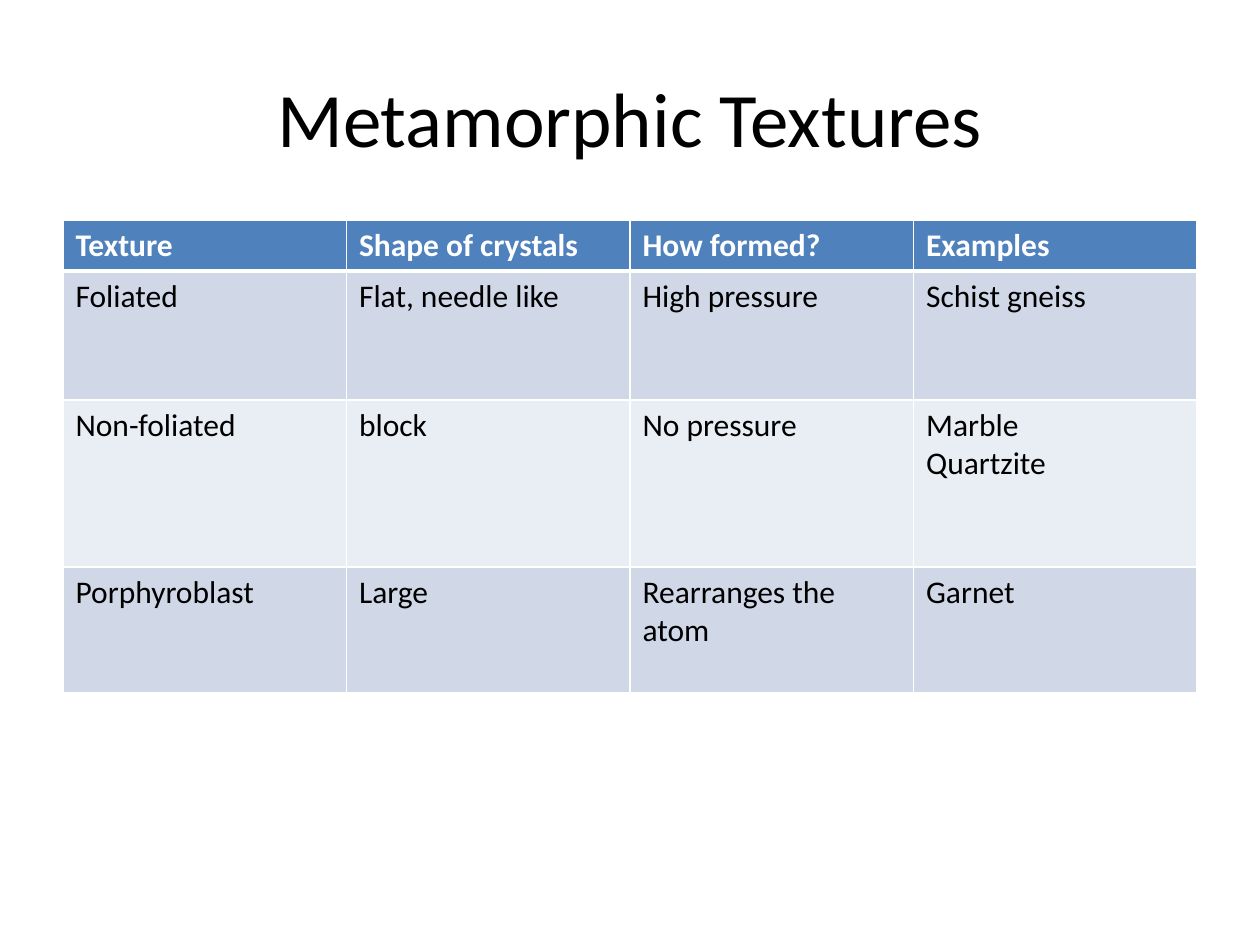
import pptx
import pptx.util
import pptx.dml.color
import pptx.enum.text
import pptx.oxml.ns
import lxml.etree

RGB = pptx.dml.color.RGBColor
WHITE = RGB(0xFF, 0xFF, 0xFF)
BLACK = RGB(0, 0, 0)
BLUE = RGB(0x4F, 0x81, 0xBD)
DARK = RGB(0xD0, 0xD8, 0xE8)
LIGHT = RGB(0xE9, 0xED, 0xF4)

WIDE, HIGH = 10, 7.5
COLS, ROWS = 20, 30
TALL = [1.6, 4.1, 5.3, 4]
DATA = [
    ["Texture", "Shape of crystals", "How formed?", "Examples"],
    ["Foliated", "Flat, needle like", "High pressure", "Schist gneiss"],
    ["Non-foliated", "block", "No pressure", "Marble\nQuartzite"],
    ["Porphyroblast", "Large", "Rearranges the atom", "Garnet"],
]


def across(n):
    return pptx.util.Inches(n * WIDE / COLS)


def down(n):
    return pptx.util.Inches(n * HIGH / ROWS)


def place(box):
    left, top, width, height = box
    return across(left), down(top), across(width), down(height)


def style(frame, size, color, bold=False, align=None):
    font = {"name": "Calibri", "size": pptx.util.Pt(size), "bold": bold}
    for para in frame.paragraphs:
        para.alignment = align
        for run in para.runs:
            for key, value in font.items():
                setattr(run.font, key, value)
            run.font.color.rgb = color


def edge(cell, sides):
    props = cell._tc.get_or_add_tcPr()
    name = pptx.oxml.ns.qn
    for spot, (side, width) in enumerate(sides.items()):
        line = lxml.etree.Element(name("a:ln" + side), w=str(pptx.util.Pt(width)))
        fill = lxml.etree.SubElement(line, name("a:solidFill"))
        lxml.etree.SubElement(fill, name("a:srgbClr"), val=str(WHITE))
        props.insert(spot, line)


def title(slide, box, text):
    frame = slide.shapes.add_textbox(*place(box)).text_frame
    form = {
        "word_wrap": True,
        "vertical_anchor": pptx.enum.text.MSO_ANCHOR.MIDDLE,
        "text": text,
    }
    for key, value in form.items():
        setattr(frame, key, value)
    style(frame, 44, BLACK, align=pptx.enum.text.PP_ALIGN.CENTER)


def grid(slide, box, data):
    table = slide.shapes.add_table(len(data), len(data[0]), *place(box)).table
    for row, share in zip(table.rows, TALL):
        row.height = down(box[3] * share / sum(TALL))
    for r, texts in enumerate(data):
        head = r == 0
        fill = BLUE if head else DARK if r % 2 else LIGHT
        sides = {"L": 1, "R": 1, "T": 3 if r == 1 else 1, "B": 3 if head else 1}
        for c, text in enumerate(texts):
            cell = table.cell(r, c)
            cell.text = text
            cell.fill.solid()
            cell.fill.fore_color.rgb = fill
            edge(cell, sides)
            style(cell.text_frame, 18, WHITE if head else BLACK, head)


def main():
    deck = pptx.Presentation()
    deck.slide_width = pptx.util.Inches(WIDE)
    deck.slide_height = pptx.util.Inches(HIGH)
    slide = deck.slides.add_slide(deck.slide_layouts[6])
    title(slide, (1, 1.2, 18, 5), "Metamorphic Textures")
    grid(slide, (1, 7, 18, sum(TALL)), DATA)
    deck.save("out.pptx")


if __name__ == "__main__":
    main()
